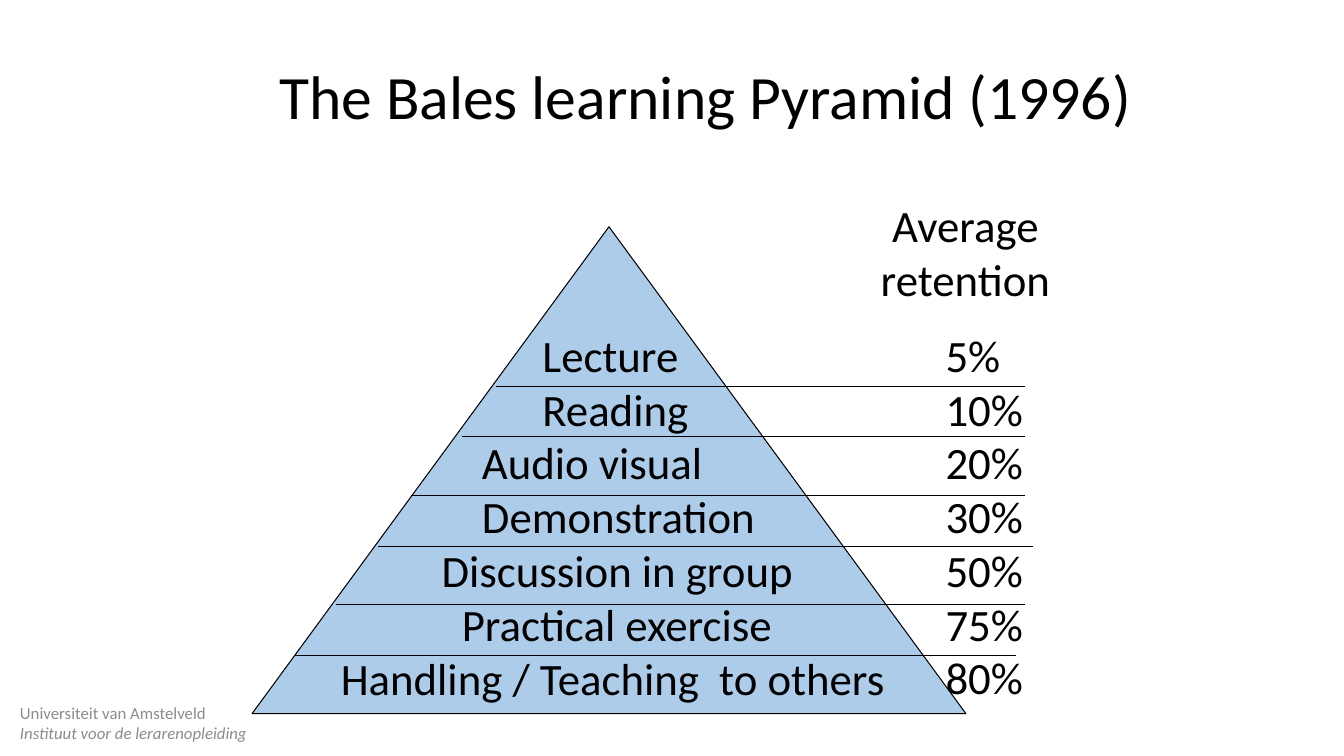
"""Build the learning pyramid slide with its average retention column."""
import pptx
import pptx.util
import pptx.dml.color
import pptx.enum.shapes
import pptx.enum.text
import pptx.oxml.ns
import lxml.etree

PX = 9144
ALIGN = pptx.enum.text.PP_ALIGN
ANCHOR = pptx.enum.text.MSO_ANCHOR


def paint(target, color):
    target.rgb = pptx.dml.color.RGBColor.from_string(color)


def write(shape, box, text, size, color="000000", align=ALIGN.LEFT, anchor=ANCHOR.TOP):
    shape.left, shape.top, shape.width, shape.height = [n * PX for n in box]
    frame = shape.text_frame
    frame.text = text
    frame.word_wrap = True
    frame.auto_size = pptx.enum.text.MSO_AUTO_SIZE.NONE
    frame.vertical_anchor = anchor
    for para in frame.paragraphs:
        para.alignment = align
        para.space_before = pptx.util.Pt(0)
        for run in para.runs:
            run.font.name = "Calibri"
            run.font.size = pptx.util.Pt(size)
            paint(run.font.color, color)
    return frame.paragraphs


deck = pptx.Presentation()
deck.slide_width = 1333 * PX
deck.slide_height = 750 * PX
slide = deck.slides.add_slide(deck.slide_layouts[1])
shapes = slide.shapes
qn = pptx.oxml.ns.qn

foot = shapes.add_textbox(0, 0, 0, 0)
lines = write(foot, (10, 697, 300, 40),
              "Universiteit van Amstelveld\nInstituut voor de lerarenopleiding",
              12, "8C8C8C", anchor=ANCHOR.MIDDLE)
lines[1].runs[0].font.italic = True

title = write(shapes.title, (267, 67, 892, 64), "The Bales learning Pyramid (1996)",
              44, anchor=ANCHOR.MIDDLE)
title[0].line_spacing = 0.9

cone = shapes.add_shape(pptx.enum.shapes.MSO_SHAPE.ISOSCELES_TRIANGLE,
                        250 * PX, 225 * PX, 708 * PX, 483 * PX)
cone.shadow.inherit = False
cone.fill.solid()
paint(cone.fill.fore_color, "5B9BD5")
tint = cone.element.spPr.find(qn("a:solidFill"))[0]
lxml.etree.SubElement(tint, qn("a:alpha"), val="50000")
paint(cone.line.color, "000000")
cone.line.width = pptx.util.Pt(0.75)

head = shapes.add_textbox(0, 0, 0, 0)
write(head, (857, 191, 201, 158), "Average\nretention", 32, align=ALIGN.CENTER)

rules = [(492, 1017, 383), (458, 1017, 433), (408, 1017, 492),
         (375, 1025, 542), (333, 1017, 600), (292, 1008, 650)]
for left, right, y in rules:
    rule = shapes.add_connector(pptx.enum.shapes.MSO_CONNECTOR.STRAIGHT,
                                left * PX, y * PX, right * PX, y * PX)
    paint(rule.line.color, "000000")
    rule.line.width = pptx.util.Pt(0.75)
    lxml.etree.SubElement(rule.element.spPr, qn("a:effectLst"))

levels = [("Lecture", 200, "5%"), ("Reading", 200, "10%"),
          ("Audio visual", 140, "20%"), ("Demonstration", 140, "30%"),
          ("Discussion in group", 100, "50%"), ("Practical exercise", 120, "75%"),
          ("Handling / Teaching  to others", 0, "80%")]
names, shifts, shares = zip(*levels)
body = slide.placeholders[1]
paras = write(body, (328, 320, 600, 387), "\n".join(names), 32)
for para, shift in zip(paras, shifts):
    props = para._p.get_or_add_pPr()
    props.set("marL", str(shift * PX))
    props.set("indent", "0")
    lxml.etree.SubElement(props, qn("a:buNone"))
body.element.getparent().append(body.element)

rates = shapes.add_textbox(0, 0, 0, 0)
write(rates, (928, 320, 130, 387), "\n".join(shares), 32)

deck.save("out.pptx")
